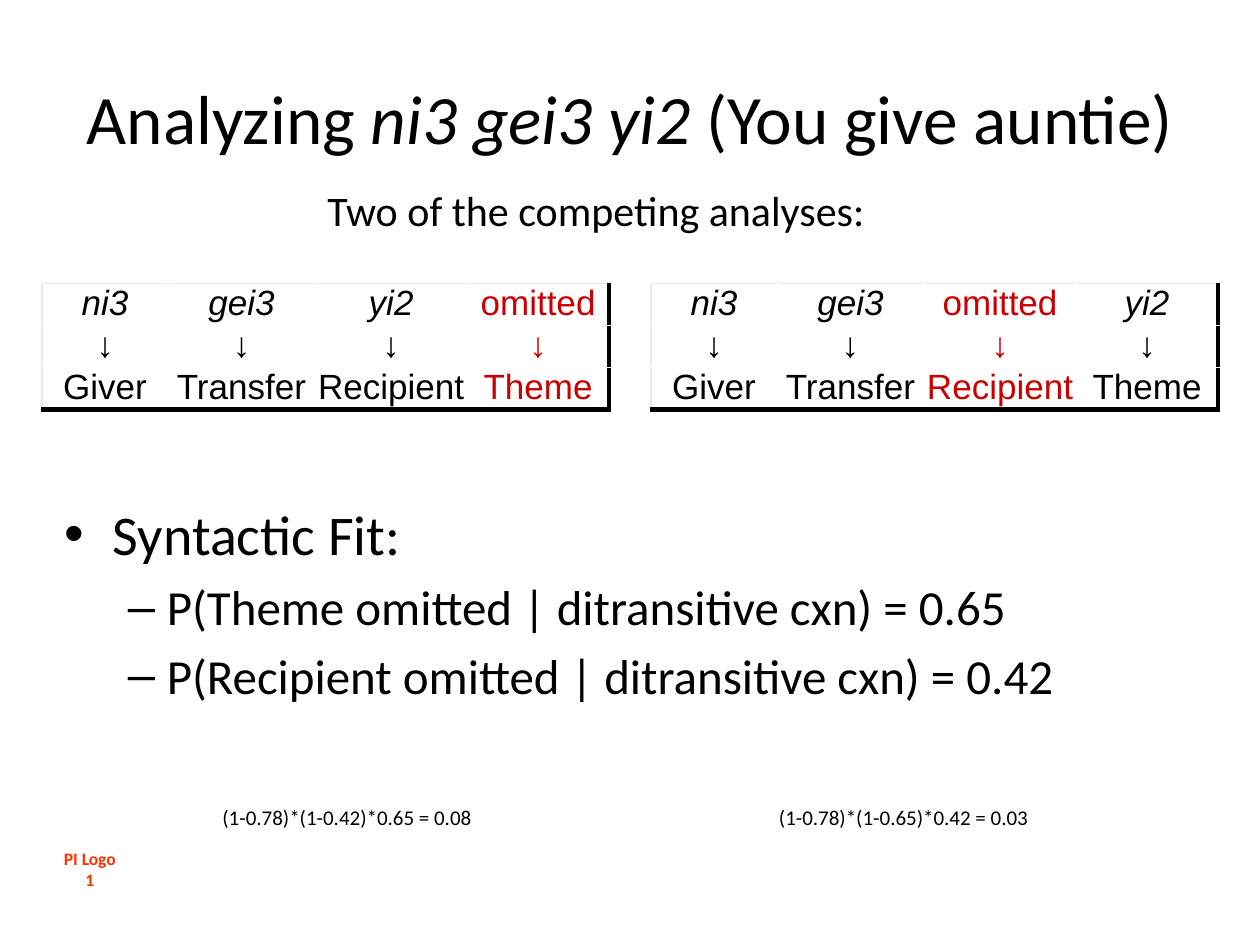
from dataclasses import dataclass

from lxml import etree
from pptx import Presentation
from pptx.dml.color import RGBColor
from pptx.enum.text import MSO_ANCHOR, PP_ALIGN
from pptx.oxml.ns import qn
from pptx.util import Inches, Pt

LEFT, CENTER = PP_ALIGN.LEFT, PP_ALIGN.CENTER
TOP, MIDDLE = MSO_ANCHOR.TOP, MSO_ANCHOR.MIDDLE
COLUMNS, ROWS = 120, 90


@dataclass(frozen=True)
class Theme:
    ink: str = "000000"
    accent: str = "CC0000"
    label: str = "FF3300"
    rule: str = "EEECE1"
    text_font: str = "Calibri"
    table_font: str = "Arial"
    title: float = 39.6
    bullet: float = 32
    sub_bullet: float = 28
    lead: float = 24
    cell: float = 20
    formula: float = 12
    footer: float = 10


class SlideBuilder:
    def __init__(self, presentation, theme):
        self.theme = theme
        self.slide = presentation.slides.add_slide(presentation.slide_layouts[6])
        self.column = presentation.slide_width / COLUMNS
        self.row = presentation.slide_height / ROWS

    def box(self, left, top, width, height):
        return (round(left * self.column), round(top * self.row),
                round(width * self.column), round(height * self.row))

    def style(self, paragraph, size, color=None, name=None, align=LEFT):
        paragraph.alignment = align
        paragraph.font.size = Pt(size)
        paragraph.font.name = name or self.theme.text_font
        paragraph.font.color.rgb = RGBColor.from_string(color or self.theme.ink)

    def frame(self, box, wrap=False, anchor=TOP):
        text_frame = self.slide.shapes.add_textbox(*self.box(*box)).text_frame
        text_frame.word_wrap = wrap
        text_frame.vertical_anchor = anchor
        return text_frame

    def text(self, box, runs, size, wrap=False, anchor=TOP, align=LEFT,
             color=None, bold=False):
        """Add one line of (words, italic) runs."""
        paragraph = self.frame(box, wrap, anchor).paragraphs[0]
        for words, italic in runs:
            run = paragraph.add_run()
            run.text = words
            if italic:
                run.font.italic = True
        self.style(paragraph, size, color, align=align)
        paragraph.font.bold = bold

    def bullets(self, box, items):
        """Add (words, level) items as a two-level list."""
        levels = (("•", 0.38, 0.38, self.theme.bullet),
                  ("–", 0.81, 0.31, self.theme.sub_bullet))
        text_frame = self.frame(box, wrap=True)
        for index, (words, level) in enumerate(items):
            paragraph = text_frame.add_paragraph() if index else text_frame.paragraphs[0]
            mark, margin, hanging, size = levels[level]
            paragraph.text = words
            paragraph.level = level
            if index:
                paragraph.space_before = Pt(0.2 * size)
            properties = paragraph._p.get_or_add_pPr()
            properties.set("marL", str(Inches(margin)))
            properties.set("indent", str(-Inches(hanging)))
            etree.SubElement(properties, qn("a:buFont"), typeface="Arial")
            etree.SubElement(properties, qn("a:buChar"), char=mark)
            self.style(paragraph, size)

    def border(self, cell, side, color, width):
        line = etree.SubElement(cell._tc.get_or_add_tcPr(), qn(f"a:ln{side}"),
                                w=str(Pt(width)))
        fill = etree.SubElement(line, qn("a:solidFill"))
        etree.SubElement(fill, qn("a:srgbClr"), val=color)

    def mapping(self, box, widths, pairs):
        """Add a table of words over roles; omitted words are accented."""
        theme = self.theme
        table = self.slide.shapes.add_table(3, len(pairs), *self.box(*box)).table
        table.first_row = table.horz_banding = False
        for column, width in zip(table.columns, widths):
            column.width = round(width * self.column)
        for x, (word, role) in enumerate(pairs):
            omitted = word == "omitted"
            for y, words in enumerate((word, "↓", role)):
                cell = table.cell(y, x)
                cell.margin_left = cell.margin_right = 0
                cell.margin_top = cell.margin_bottom = 0
                paragraph = cell.text_frame.paragraphs[0]
                paragraph.text = words
                self.style(paragraph, theme.cell, theme.accent if omitted else theme.ink,
                           theme.table_font, CENTER)
                paragraph.font.italic = y == 0 and not omitted
                # Light rule at left and top, heavy rule at right and bottom
                edges = (("L", x == 0, theme.rule, 1),
                         ("R", x == len(pairs) - 1, theme.ink, 3),
                         ("T", y == 0, theme.rule, 1),
                         ("B", y == 2, theme.ink, 3))
                for side, outer, color, width in edges:
                    if outer:
                        self.border(cell, side, color, width)
                cell.fill.background()


def main():
    presentation = Presentation()
    presentation.slide_width, presentation.slide_height = Inches(10), Inches(7.5)
    theme = Theme()
    builder = SlideBuilder(presentation, theme)

    # Footer label
    builder.text((4.3, 80.2, 8.5, 5), [("PI Logo 1", False)], theme.footer,
                 align=CENTER, color=theme.label, bold=True)

    # Title and lead line
    builder.text((6, 3.6, 108, 15),
                 [("Analyzing ", False), ("ni3 gei3 yi2", True),
                  (" (You give auntie)", False)],
                 theme.title, wrap=True, anchor=MIDDLE, align=CENTER)
    builder.text((30, 17, 58.7, 6), [("Two of the competing analyses:", False)],
                 theme.lead)

    # Competing analyses, each with its probability
    roles = ("Giver", "Transfer", "Recipient", "Theme")
    analyses = (
        (4, 20, ("ni3", "gei3", "yi2", "omitted"), "(1-0.78)*(1-0.42)*0.65 = 0.08"),
        (62, 73, ("ni3", "gei3", "omitted", "yi2"), "(1-0.78)*(1-0.65)*0.42 = 0.03"),
    )
    for table_left, formula_left, words, formula in analyses:
        builder.mapping((table_left, 27, 54, 12), (12, 14, 14.5, 13.5),
                        list(zip(words, roles)))
        builder.text((formula_left, 76, 28, 3.6), [(formula, False)], theme.formula)

    # Syntactic fit
    builder.bullets((5, 47, 108, 21), (
        ("Syntactic Fit:", 0),
        ("P(Theme omitted | ditransitive cxn) = 0.65", 1),
        ("P(Recipient omitted | ditransitive cxn) = 0.42", 1),
    ))

    presentation.save("out.pptx")


if __name__ == "__main__":
    main()
